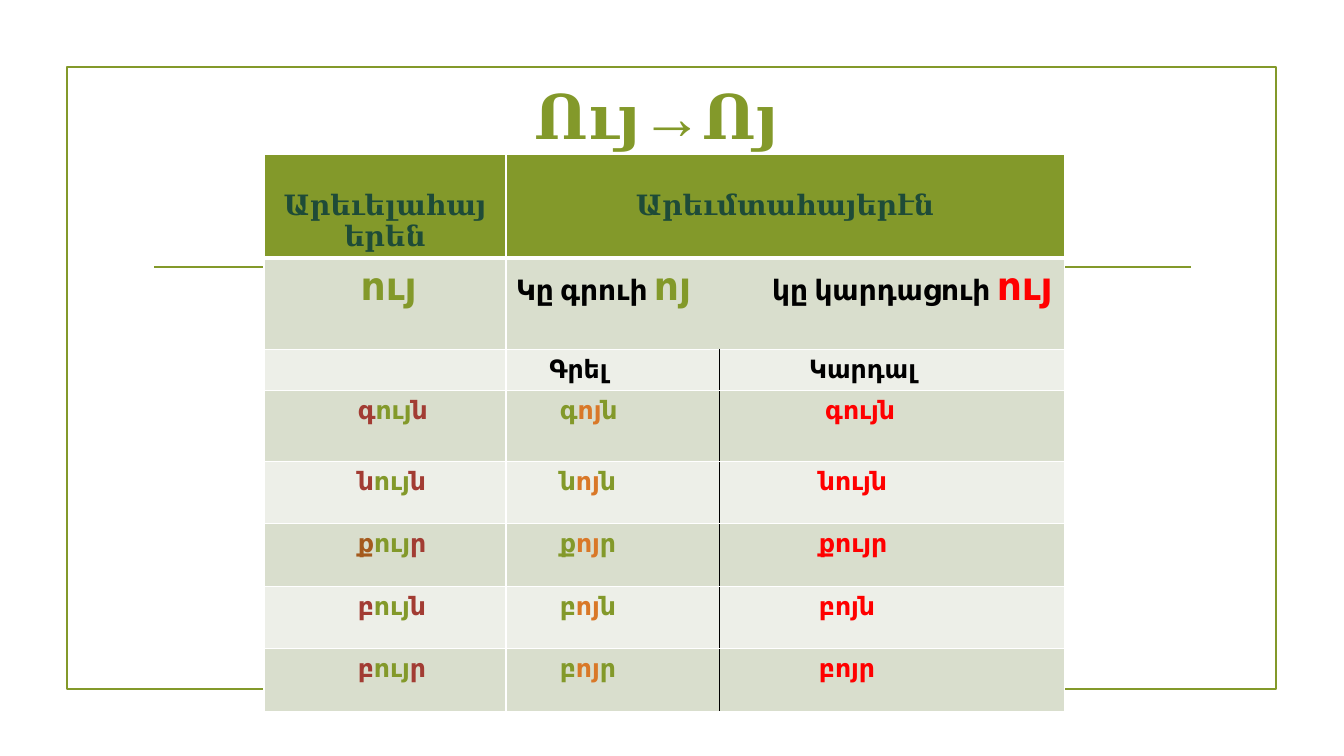
from lxml import etree
from pptx import Presentation
from pptx import util as u
from pptx.dml.color import RGBColor
from pptx.enum import shapes, text
from pptx.oxml.ns import qn


class Theme:
    green, dark_green, orange = "83992A", "1E4B38", "D97828"
    maroon, brown, red = "A23C33", "A45A1D", "FF0000"
    black, white = "000000", "FFFFFF"
    bands = ("D9DECD", "EDEFE8")
    serif, sans = "Times New Roman", "Calibri"
    title, head, large, body = 44, 20, 28, 18


# Content: a run is (text, colour, size)
TITLE = "Ույ→Ոյ"
HEADERS = ["Արեւելահայերեն", "Արեւմտահայերէն"]
EASTERN_RULE = [("ույ", Theme.green, Theme.large)]
WESTERN_RULE = [
    ("Կը գրուի ", Theme.black, Theme.head),
    ("ոյ", Theme.green, Theme.large),
    ("\tկը կարդացուի ", Theme.black, Theme.head),
    ("ույ", Theme.red, Theme.large),
]
SUBHEADS = ["Գրել", "Կարդալ"]
# First letter, its colour, last letter, reading, indent of the reading
WORDS = [
    ("գ", Theme.maroon, "ն", "գույն", 75.5),
    ("ն", Theme.maroon, "ն", "նույն", 71),
    ("ք", Theme.brown, "ր", "քույր", 71),
    ("բ", Theme.maroon, "ն", "բոյն", 71),
    ("բ", Theme.maroon, "ր", "բոյր", 71),
]

# Geometry in points
FRAME = (47.7, 48.1, 864, 444.2)
RULE_LEFT, RULE_RIGHT, RULE_Y = 110.2, 850.4, 190.8
TITLE_BOX = (102.2, 48.2, 756, 67)
TABLE_LEFT, TABLE_TOP = 188.6, 110.4
COLUMNS = [172.8, 152.6, 246.2]
ROWS = [63.4, 65.5, 28.8, 50.8] + [44.6] * (len(WORDS) - 1)
INSET = 7.2


def rgb(value):
    return RGBColor.from_string(value)


def add_runs(para, runs, font):
    for words, colour, size in runs:
        span = para.add_run()
        span.text = words
        span.font.name, span.font.size, span.font.bold = font, u.Pt(size), True
        span.font.color.rgb = rgb(colour)


def fill_cell(cell, runs, indent=INSET, font=Theme.sans):
    cell.margin_left = u.Pt(indent)
    add_runs(cell.text_frame.paragraphs[0], runs, font)


def set_borders(cell, edges):
    props = cell._tc.get_or_add_tcPr()
    for place, (side, colour, width) in enumerate(edges):
        line = etree.Element(qn(f"a:ln{side}"), w=str(u.Pt(width)))
        fill = etree.SubElement(line, qn("a:solidFill"))
        etree.SubElement(fill, qn("a:srgbClr"), val=colour)
        props.insert(place, line)


deck = Presentation()
deck.slide_width, deck.slide_height = u.Pt(960), u.Pt(540)
page = deck.slides.add_slide(deck.slide_layouts[5])

# Frame and rule
frame = page.shapes.add_shape(shapes.MSO_SHAPE.RECTANGLE, *map(u.Pt, FRAME))
frame.shadow.inherit = False
frame.fill.background()
rule = page.shapes.add_connector(
    shapes.MSO_CONNECTOR.STRAIGHT,
    *map(u.Pt, (RULE_LEFT, RULE_Y, RULE_RIGHT, RULE_Y)))
etree.SubElement(rule._element.spPr, qn("a:effectLst"))
for outline in (frame.line, rule.line):
    outline.color.rgb, outline.width = rgb(Theme.green), u.Pt(1.25)

# Title, centred slightly left of its box
title = page.shapes.title
title.left, title.top, title.width, title.height = map(u.Pt, TITLE_BOX)
box = title.text_frame
box.vertical_anchor = text.MSO_ANCHOR.MIDDLE
box.margin_right = u.Pt(INSET + 22)
box.paragraphs[0].alignment = text.PP_ALIGN.CENTER
add_runs(box.paragraphs[0], [(TITLE, Theme.green, Theme.title)], Theme.serif)

# Table grid
table = page.shapes.add_table(
    len(ROWS), len(COLUMNS), u.Pt(TABLE_LEFT), u.Pt(TABLE_TOP),
    u.Pt(sum(COLUMNS)), u.Pt(sum(ROWS))).table
table.first_row = table.horz_banding = False
for column, width in zip(table.columns, COLUMNS):
    column.width = u.Pt(width)
for row, height in zip(table.rows, ROWS):
    row.height = u.Pt(height)

# Fills and borders: the two western columns are parted by a black line
for r in range(len(ROWS)):
    for c in range(len(COLUMNS)):
        cell = table.cell(r, c)
        cell.fill.solid()
        cell.fill.fore_color.rgb = rgb(Theme.bands[(r - 1) % 2] if r else Theme.green)
        split = r >= 2
        set_borders(cell, [
            ("L", Theme.black if split and c == 2 else Theme.white, 1),
            ("R", Theme.black if split and c == 1 else Theme.white, 1),
            ("T", Theme.white, 3 if r == 1 else 1),
            ("B", Theme.white, 1 if r else 3),
        ])
for r in (0, 1):
    table.cell(r, 1).merge(table.cell(r, 2))

# Header row
for c, header in enumerate(HEADERS):
    cell = table.cell(0, c)
    cell.margin_top = u.Pt(25.7)
    cell.text_frame.paragraphs[0].alignment = text.PP_ALIGN.CENTER
    fill_cell(cell, [(header, Theme.dark_green, Theme.head)], font=Theme.serif)

# Spelling rule row, with a tab stop before the reading
fill_cell(table.cell(1, 0), EASTERN_RULE, 69)
western = table.cell(1, 1)
western.margin_right = u.Pt(2)
para_props = western.text_frame.paragraphs[0]._p.get_or_add_pPr()
tabs = etree.SubElement(para_props, qn("a:tabLst"))
etree.SubElement(tabs, qn("a:tab"), pos=str(u.Pt(183)), algn="l")
fill_cell(western, WESTERN_RULE)

# Subheads and word rows
for c, (subhead, indent) in enumerate(zip(SUBHEADS, (31, 64)), start=1):
    fill_cell(table.cell(2, c), [(subhead, Theme.black, Theme.body)], indent)
for r, (first, colour, last, reading, indent) in enumerate(WORDS, start=3):
    fill_cell(table.cell(r, 0), [
        (first, colour, Theme.body),
        ("ույ", Theme.green, Theme.body),
        (last, Theme.maroon, Theme.body)], 67)
    fill_cell(table.cell(r, 1), [
        (first, Theme.green, Theme.body),
        ("ոյ", Theme.orange, Theme.body),
        (last, Theme.green, Theme.body)], 38.5)
    fill_cell(table.cell(r, 2), [(reading, Theme.red, Theme.body)], indent)

deck.save("out.pptx")
